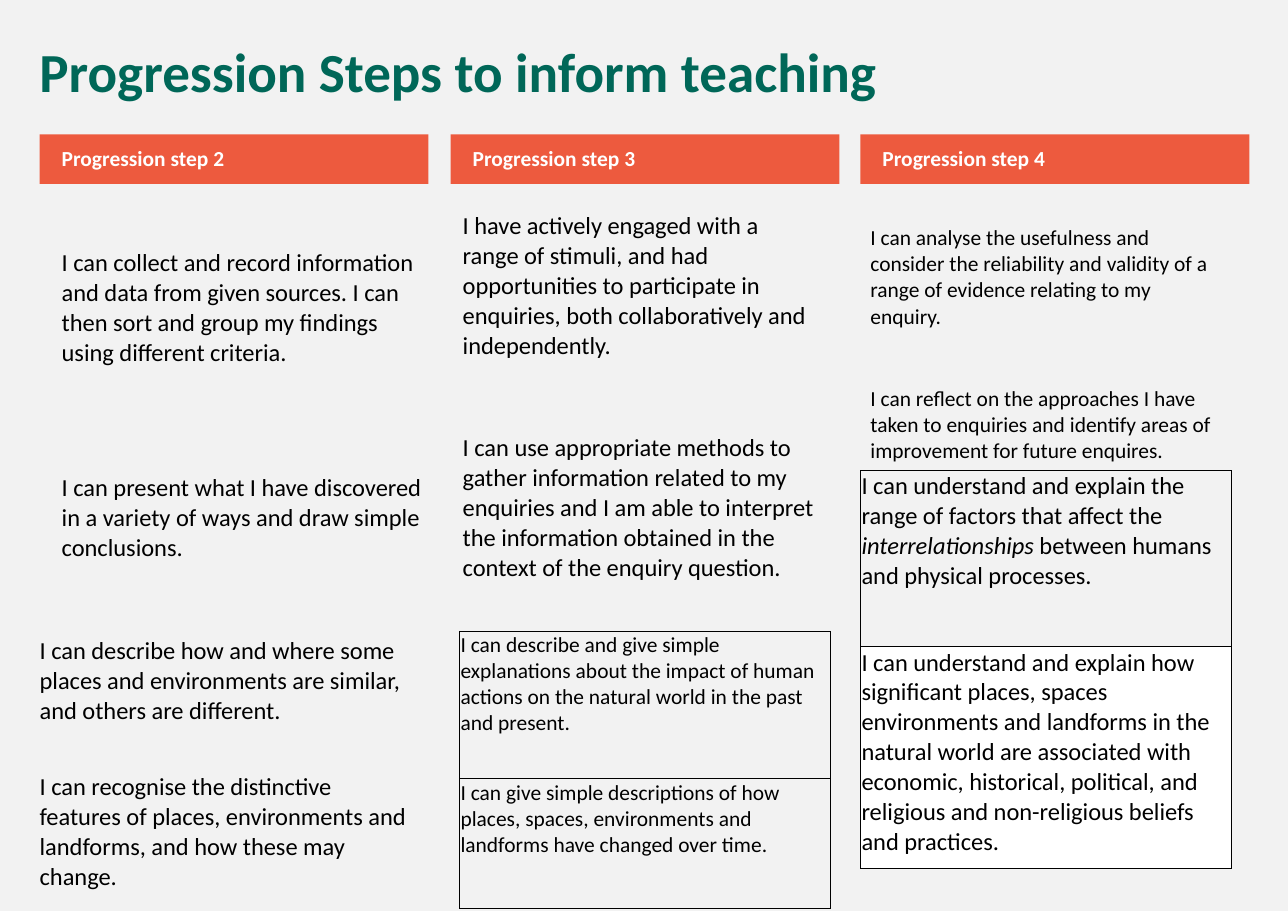
from lxml import etree
from pptx import Presentation
from pptx.dml.color import RGBColor
from pptx.enum.shapes import MSO_SHAPE
from pptx.enum.text import MSO_ANCHOR
from pptx.oxml.ns import qn
from pptx.util import Inches, Pt

RECTANGLE = MSO_SHAPE.RECTANGLE
TOP, MIDDLE = MSO_ANCHOR.TOP, MSO_ANCHOR.MIDDLE
COLOURS = {
    "background": "F2F2F2",
    "orange": "ED5A3E",
    "green": "006758",
    "black": "000000",
    "white": "FFFFFF",
}
FONT = "Calibri"
NO_STYLE = "{2D5ABB26-0587-4C30-8999-92F81FD0307C}"
PADDED = (0.1, 0.05, 0.1, 0.05)
TIGHT = (0.01, 0.01, 0.01, 0.05)
HEADERS = (
    (0.36, "Progression step 2"),
    (4.09, "Progression step 3"),
    (7.81, "Progression step 4"),
)

COLLECT = "I can collect and record information and data from given sources. I can then sort and group my findings using different criteria."
PRESENT = "I can present what I have discovered in a variety of ways and draw simple conclusions."
ENGAGE = "I have actively engaged with a range of stimuli, and had opportunities to participate in enquiries, both collaboratively and independently."
METHODS = "I can use appropriate methods to gather information related to my enquiries and I am able to interpret the information obtained in the context of the enquiry question."
ANALYSE = "I can analyse the usefulness and consider the reliability and validity of a range of evidence relating to my enquiry."
REFLECT = "I can reflect on the approaches I have taken to enquiries and identify areas of improvement for future enquires."
DESCRIBE = "I can describe how and where some places and environments are similar, and others are different."
RECOGNISE = "I can recognise the distinctive features of places, environments and landforms, and how these may change."
IMPACT = "I can describe and give simple explanations about the impact of human actions on the natural world in the past and present."
CHANGES = "I can give simple descriptions of how places, spaces, environments and landforms have changed over time."
FACTORS = (
    "I can understand and explain the range of factors that affect the ",
    "interrelationships",
    " between humans and physical processes.",
)
BELIEFS = "I can understand and explain how significant places, spaces environments and landforms in the natural world are associated with economic, historical, political, and religious and non-religious beliefs and practices."


def colour(name):
    """Return the named colour."""
    return RGBColor.from_string(COLOURS[name])


def write_text(paragraph, text, size=16, ink="black", bold=False, italic=False):
    """Add one formatted run to a paragraph."""
    run = paragraph.add_run()
    run.text = text
    run.font.name = FONT
    run.font.size = Pt(size)
    run.font.bold = bold
    run.font.italic = italic
    run.font.color.rgb = colour(ink)


def set_margins(holder, margins):
    """Set left, top, right and bottom margins of a cell or text frame."""
    sides = ("margin_left", "margin_top", "margin_right", "margin_bottom")
    for side, margin in zip(sides, margins):
        setattr(holder, side, Inches(margin))


def add_title(slide, box):
    """Place the slide heading in its box."""
    shape = slide.shapes.add_textbox(*map(Inches, box))
    frame = shape.text_frame
    frame.word_wrap = True
    set_margins(frame, PADDED)
    paragraph = frame.paragraphs[0]
    paragraph.line_spacing = 0.9
    write_text(paragraph, "Progression Steps to inform teaching", size=36, ink="green", bold=True)


def add_header(slide, box, text):
    """Place one orange column header."""
    shape = slide.shapes.add_shape(RECTANGLE, *map(Inches, box))
    shape.shadow.inherit = False
    shape.fill.solid()
    shape.fill.fore_color.rgb = colour("orange")
    shape.line.fill.background()
    frame = shape.text_frame
    frame.word_wrap = True
    frame.vertical_anchor = MIDDLE
    set_margins(frame, (0.2, 0.05, 0.1, 0.05))
    paragraph = frame.paragraphs[0]
    paragraph.alignment = 1
    paragraph.line_spacing = 0.9
    write_text(paragraph, text, size=14, ink="white", bold=True)


def add_borders(cell):
    """Draw a thin black line on each side of a cell."""
    properties = cell._tc.get_or_add_tcPr()
    for side in ("a:lnL", "a:lnR", "a:lnT", "a:lnB"):
        line = etree.SubElement(properties, qn(side), w=str(Pt(0.5)))
        fill = etree.SubElement(line, qn("a:solidFill"))
        etree.SubElement(fill, qn("a:srgbClr"), val=COLOURS["black"])


def add_statements(slide, left, top, width, heights, statements, size=16,
                   bordered=False, anchors=(MIDDLE, MIDDLE),
                   bottoms=(0.05, 0.05), fills=(None, None)):
    """Place a one-column table of statements and return its cells."""
    box = map(Inches, (left, top, width, sum(heights)))
    frame = slide.shapes.add_table(len(heights), 1, *box)
    table = frame.table
    table.first_row = table.horz_banding = False
    next(frame.element.iter(qn("a:tableStyleId"))).text = NO_STYLE
    rows = zip(heights, statements, anchors, bottoms, fills)
    for index, (height, statement, anchor, bottom, fill) in enumerate(rows):
        table.rows[index].height = Inches(height)
        cell = table.cell(index, 0)
        cell.vertical_anchor = TOP if bordered else anchor
        set_margins(cell, TIGHT if bordered else PADDED[:3] + (bottom,))
        if bordered:
            add_borders(cell)
        if fill:
            cell.fill.solid()
            cell.fill.fore_color.rgb = colour(fill)
        else:
            cell.fill.background()
        parts = (statement,) if isinstance(statement, str) else statement
        for position, part in enumerate(parts):
            write_text(cell.text_frame.paragraphs[0], part, size=size, italic=position == 1)


def build_slide(presentation):
    """Build the progression steps slide."""
    slide = presentation.slides.add_slide(presentation.slide_layouts[6])
    slide.background.fill.solid()
    slide.background.fill.fore_color.rgb = colour("background")
    for left, text in HEADERS:
        add_header(slide, (left, 1.22, 3.53, 0.45), text)
    add_title(slide, (0.26, 0.36, 11.08, 0.65))
    add_statements(slide, 0.46, 1.72, 3.48, (2.15, 1.94), (COLLECT, PRESENT),
                   bottoms=(0.05, 0.32))
    add_statements(slide, 4.1, 1.87, 3.43, (2.01, 1.46), (ENGAGE, METHODS),
                   anchors=(TOP, MIDDLE))
    add_statements(slide, 7.8, 1.8, 3.39, (1.44, 1.24), (ANALYSE, REFLECT), size=14)
    add_statements(slide, 0.26, 5.41, 3.6, (1.55, 1.14), (DESCRIBE, RECOGNISE))
    add_statements(slide, 4.17, 5.73, 3.37, (1.34, 1.18), (IMPACT, CHANGES),
                   size=14, bordered=True)
    add_statements(slide, 7.81, 4.27, 3.37, (1.6, 2.01), (FACTORS, BELIEFS),
                   bordered=True, fills=(None, "white"))


def main():
    """Create and save the presentation."""
    presentation = Presentation()
    presentation.slide_width = Inches(11.69)
    presentation.slide_height = Inches(8.27)
    build_slide(presentation)
    presentation.save("out.pptx")


if __name__ == "__main__":
    main()
